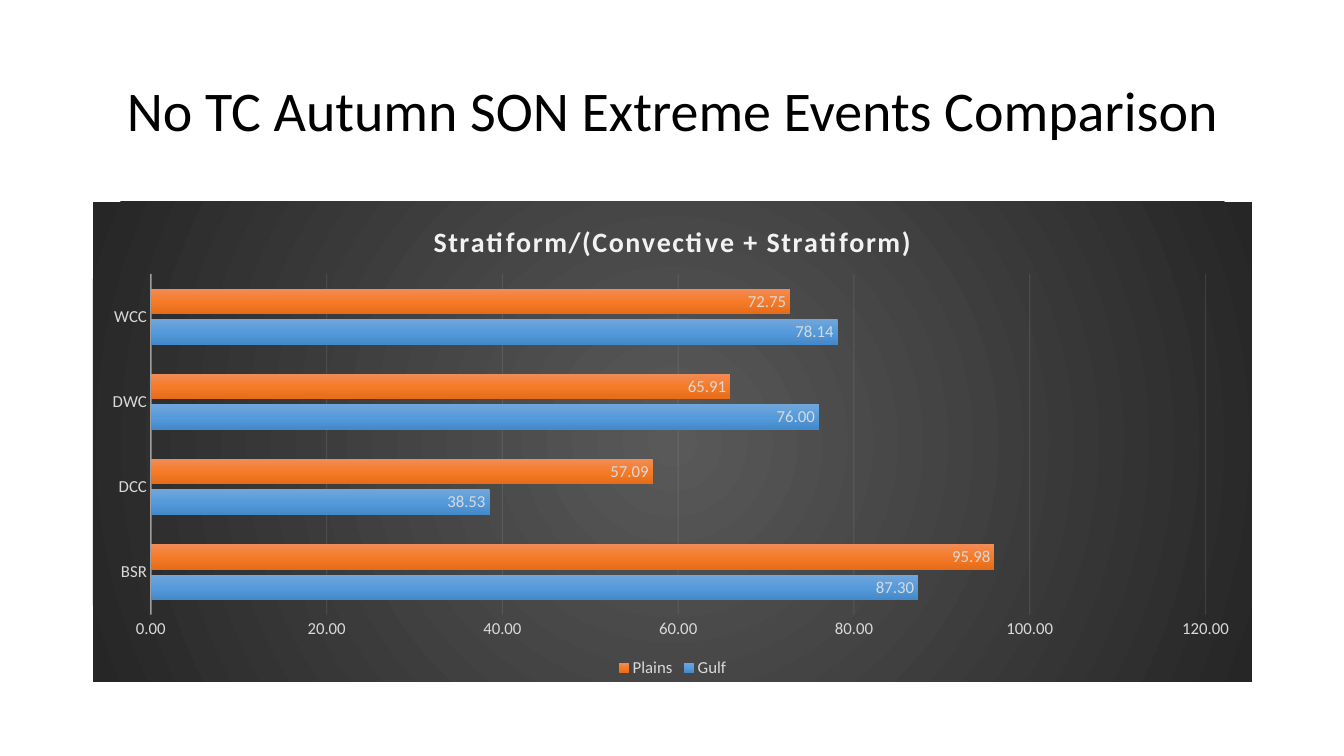
"""Builds the slide comparing extreme autumn events on the Plains and the Gulf."""
from lxml import etree
from pptx import Presentation
from pptx.chart.data import CategoryChartData
from pptx.dml.color import RGBColor
from pptx.enum.chart import XL_CHART_TYPE, XL_LABEL_POSITION, XL_LEGEND_POSITION, XL_TICK_MARK
from pptx.enum.text import MSO_ANCHOR, MSO_AUTO_SIZE, PP_ALIGN
from pptx.oxml import parse_xml
from pptx.oxml.ns import nsdecls, qn
from pptx.util import Emu, Pt

BAR = XL_CHART_TYPE.BAR_CLUSTERED
INSIDE_END = XL_LABEL_POSITION.INSIDE_END
BOTTOM = XL_LEGEND_POSITION.BOTTOM
NO_TICK = XL_TICK_MARK.NONE
MIDDLE = MSO_ANCHOR.MIDDLE
NO_FIT = MSO_AUTO_SIZE.NONE
CENTER = PP_ALIGN.CENTER

BLACK = RGBColor(0x00, 0x00, 0x00)
PALE = RGBColor(0xF2, 0xF2, 0xF2)
SILVER = RGBColor(0xD9, 0xD9, 0xD9)
BACKDROP = (RGBColor(0x59, 0x59, 0x59), RGBColor(0x26, 0x26, 0x26))
BLUES = (RGBColor(0x71, 0xA6, 0xDB), RGBColor(0x55, 0x9B, 0xDB), RGBColor(0x44, 0x8A, 0xCA))
ORANGES = (RGBColor(0xF1, 0x8C, 0x57), RGBColor(0xF6, 0x7B, 0x28), RGBColor(0xE5, 0x6C, 0x19))

CLOUD_TYPES = ("BSR", "DCC", "DWC", "WCC")
REGIONS = {
    "Gulf": ((87.30, 38.53, 76.00, 78.14), BLUES),
    "Plains": ((95.98, 57.09, 65.91, 72.75), ORANGES),
}
DOWNWARD = '<a:lin ang="5400000" scaled="0"/>'
RADIAL = ('<a:path path="circle"><a:fillToRect l="50000" t="50000" r="50000" b="50000"/>'
          '</a:path>')
PLOT_LAYOUT = {"x": 0.05, "y": 0.15, "w": 0.91, "h": 0.71}


def px(length):
    """Turn whole pixels into EMU."""
    return Emu(round(length * 914400 / 100.8))


def apply(target, **values):
    """Set each given value as an attribute."""
    for name, value in values.items():
        setattr(target, name, value)


def gradient(colors, direction):
    """Return a gradient fill with evenly spaced stops."""
    step = 100000 // (len(colors) - 1)
    stops = "".join(f'<a:gs pos="{i * step}"><a:srgbClr val="{color}"/></a:gs>'
                    for i, color in enumerate(colors))
    return parse_xml(f'<a:gradFill {nsdecls("a")} rotWithShape="1">'
                     f'<a:gsLst>{stops}</a:gsLst>{direction}</a:gradFill>')


class ComparisonSlide:
    """Hold the style and the current slide."""

    small = {"name": "Calibri", "size": Pt(12), "bold": False}

    def __init__(self, deck):
        """Add a title-only slide."""
        self.slide = deck.slides.add_slide(deck.slide_layouts[5])

    def style(self, font, color, **changes):
        """Give a font the slide's style."""
        apply(font, **{**self.small, **changes})
        font.color.rgb = color

    def title(self, text, left, top, width, height):
        """Fill and place the title."""
        heading = self.slide.shapes.title
        apply(heading, left=px(left), top=px(top), width=px(width), height=px(height))
        frame = heading.text_frame
        frame.text = text
        apply(frame, vertical_anchor=MIDDLE, auto_size=NO_FIT, word_wrap=True)
        apply(frame.paragraphs[0], alignment=CENTER, line_spacing=0.9)
        self.style(frame.paragraphs[0].runs[0].font, BLACK, size=Pt(40))

    def chart(self, caption, left, top, width, height):
        """Add the bar chart of all regions."""
        data = CategoryChartData(number_format="0.00")
        data.categories = CLOUD_TYPES
        for region, (shares, _) in REGIONS.items():
            data.add_series(region, shares)
        chart = self.slide.shapes.add_chart(
            BAR, px(left), px(top), px(width), px(height), data).chart
        self.style(chart.font, SILVER)
        self.caption(chart, caption)
        self.axes(chart)
        self.bars(chart.plots[0])
        apply(chart, has_legend=True)
        apply(chart.legend, position=BOTTOM, include_in_layout=False)
        self.style(chart.legend.font, SILVER)
        self.backdrop(chart)

    def caption(self, chart, text):
        """Write the chart's caption."""
        frame = chart.chart_title.text_frame
        frame.text = text
        chart.chart_title.include_in_layout = False
        caption = frame.paragraphs[0].runs[0]
        self.style(caption.font, PALE, size=Pt(20), bold=True)
        caption.font._element.set("spc", "100")

    def axes(self, chart):
        """Format both axes and the gridlines."""
        clouds, shares = chart.category_axis, chart.value_axis
        for axis in (clouds, shares):
            apply(axis, major_tick_mark=NO_TICK, minor_tick_mark=NO_TICK)
            self.style(axis.tick_labels.font, SILVER)
        apply(shares, minimum_scale=0, maximum_scale=120, major_unit=20,
              has_major_gridlines=True)
        apply(shares.tick_labels, number_format="0.00", number_format_is_linked=False)
        shares.format.line.fill.background()
        lines = ((clouds, "c:spPr", clouds.format.line, 1, 54),
                 (shares, "c:majorGridlines", shares.major_gridlines.format.line, 0.75, 10))
        for axis, part, line, weight, opacity in lines:
            line.width = Pt(weight)
            line.color.rgb = PALE
            tint = axis._element.find(qn(part)).find(f".//{qn('a:srgbClr')}")
            etree.SubElement(tint, qn("a:alpha")).set("val", str(opacity * 1000))

    def bars(self, plot):
        """Colour and label the bars."""
        apply(plot, gap_width=115, overlap=-20, vary_by_categories=False)
        for series in plot.series:
            series.invert_if_negative = False
            properties = series._element.get_or_add_spPr()
            properties.append(gradient(REGIONS[series.name][1], DOWNWARD))
            labels = series.data_labels
            apply(labels, show_value=True, position=INSIDE_END, number_format="0.00",
                  number_format_is_linked=False)
            self.style(labels.font, SILVER)

    def backdrop(self, chart):
        """Place the plot and fill the chart's background."""
        body = chart._chartSpace.find(qn("c:chart"))
        plot_area = body.find(qn("c:plotArea"))
        for old in plot_area.findall(qn("c:layout")):
            plot_area.remove(old)
        places = "".join(f'<c:{side} val="{share}"/>' for side, share in PLOT_LAYOUT.items())
        plot_area.insert(0, parse_xml(
            f'<c:layout {nsdecls("c")}><c:manualLayout><c:layoutTarget val="inner"/>'
            f'<c:xMode val="edge"/><c:yMode val="edge"/>{places}</c:manualLayout></c:layout>'))
        properties = parse_xml(f'<c:spPr {nsdecls("c", "a")}><a:ln><a:noFill/></a:ln></c:spPr>')
        properties.insert(0, gradient(BACKDROP, RADIAL))
        body.addnext(properties)


def main():
    """Build and save the slide."""
    deck = Presentation()
    apply(deck, slide_width=px(1344), slide_height=px(756))
    page = ComparisonSlide(deck)
    page.title("No TC Autumn SON Extreme Events Comparison", 93, 40, 1159, 146)
    page.chart("Stratiform/(Convective + Stratiform)", 93, 202, 1159, 480)
    deck.save("out.pptx")


if __name__ == "__main__":
    main()
